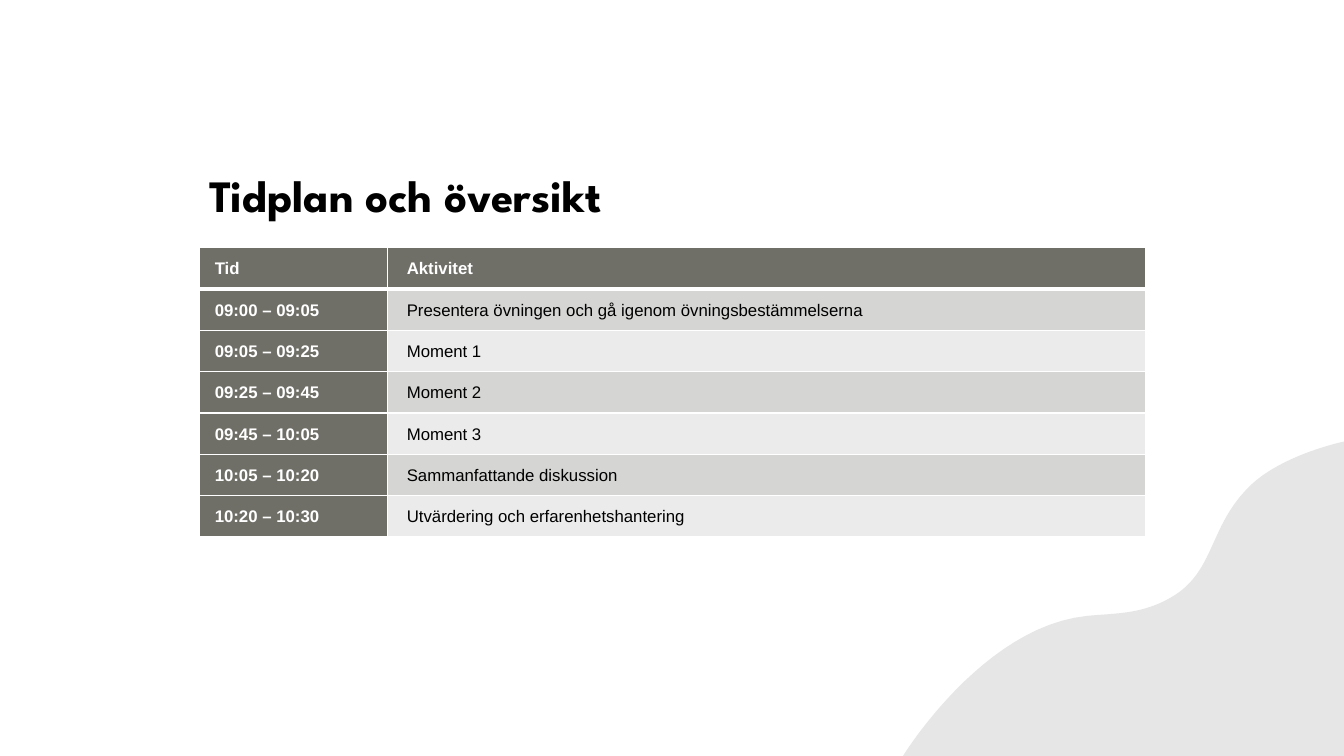
from dataclasses import dataclass

import lxml.etree
import pptx
import pptx.dml.color
import pptx.enum.text
import pptx.oxml.ns
import pptx.slide
import pptx.table
import pptx.util

Pt = pptx.util.Pt
RGBColor = pptx.dml.color.RGBColor
Anchor = pptx.enum.text.MSO_ANCHOR
qn = pptx.oxml.ns.qn

WHITE = RGBColor(0xFF, 0xFF, 0xFF)
BLACK = RGBColor(0x00, 0x00, 0x00)
OLIVE = RGBColor(0x6F, 0x6E, 0x67)
DARK_BAND = RGBColor(0xD5, 0xD5, 0xD3)
LIGHT_BAND = RGBColor(0xEB, 0xEB, 0xEB)
WAVE_GREY = RGBColor(0xE7, 0xE6, 0xE6)

LEFT, WIDTH = 142.6, 675.6
TABLE_TOP, ROW_HEIGHT = 177, 29.52
CURVE_STEPS = 24

Point = tuple[float, float]


@dataclass(frozen=True)
class Activity:
    time: str
    name: str


@dataclass(frozen=True)
class Column:
    width: float
    inset: float
    indent: float


@dataclass(frozen=True)
class Curve:
    first_control: Point
    second_control: Point
    end: Point


HEADER = Activity("Tid", "Aktivitet")
SCHEDULE = [
    Activity("09:00 – 09:05", "Presentera övningen och gå igenom övningsbestämmelserna"),
    Activity("09:05 – 09:25", "Moment 1"),
    Activity("09:25 – 09:45", "Moment 2"),
    Activity("09:45 – 10:05", "Moment 3"),
    Activity("10:05 – 10:20", "Sammanfattande diskussion"),
    Activity("10:20 – 10:30", "Utvärdering och erfarenhetshantering"),
]
COLUMNS = [Column(134.3, 7.2, 4.32), Column(WIDTH - 134.3, 0, 14.4)]

WAVE_START = (645, 540)
WAVE = [
    Curve((645, 540), (702, 447.1), (776.9, 439.9)),
    Curve((797.8, 437.8), (818.6, 439.2), (841.7, 423.4)),
    Curve((867.6, 404.6), (864.7, 375.1), (892.1, 347.8)),
    Curve((915.1, 324.7), (960, 315.4), (960, 315.4)),
]


def curve_points(start: Point, curve: Curve) -> list[Point]:
    corners = (start, curve.first_control, curve.second_control, curve.end)
    points = []
    for step in range(1, CURVE_STEPS + 1):
        t = step / CURVE_STEPS
        weights = ((1 - t) ** 3, 3 * t * (1 - t) ** 2, 3 * t**2 * (1 - t), t**3)
        x, y = (sum(w * c[axis] for w, c in zip(weights, corners)) for axis in (0, 1))
        points.append((Pt(x), Pt(y)))
    return points


def draw_wave(slide: pptx.slide.Slide) -> None:
    outline = slide.shapes.build_freeform(Pt(WAVE_START[0]), Pt(WAVE_START[1]), scale=1.0)
    start = WAVE_START
    for curve in WAVE:
        outline.add_line_segments(curve_points(start, curve), close=False)
        start = curve.end
    outline.add_line_segments([(Pt(960), Pt(540))], close=True)
    wave = outline.convert_to_shape()
    wave.shadow.inherit = False
    wave.fill.solid()
    wave.fill.fore_color.rgb = WAVE_GREY
    wave.line.fill.background()


def write_title(slide: pptx.slide.Slide) -> None:
    title = slide.shapes.title
    title.left, title.top, title.width, title.height = Pt(LEFT), Pt(85.7), Pt(WIDTH), Pt(76.3)
    frame = title.text_frame
    frame.text = "Tidplan och översikt"
    frame.auto_size = pptx.enum.text.MSO_AUTO_SIZE.NONE
    frame.vertical_anchor = Anchor.BOTTOM
    heading = frame.paragraphs[0]
    heading.alignment = pptx.enum.text.PP_ALIGN.LEFT
    heading.line_spacing = 0.9
    heading.font.name = "League Spartan"
    heading.font.size = Pt(32)
    heading.font.bold = True
    heading.font.color.rgb = BLACK


def set_borders(cell: pptx.table._Cell, top: float, bottom: float) -> None:
    properties = cell._tc.get_or_add_tcPr()
    for side, width in (("L", 1), ("R", 1), ("T", top), ("B", bottom)):
        border = lxml.etree.SubElement(properties, qn(f"a:ln{side}"), w=str(Pt(width)))
        fill = lxml.etree.SubElement(border, qn("a:solidFill"))
        lxml.etree.SubElement(fill, qn("a:srgbClr"), val=str(WHITE))


def fill_cell(cell: pptx.table._Cell, text: str, column: Column, row: int, emphasis: bool) -> None:
    set_borders(cell, top=3 if row == 1 else 1, bottom=3 if row == 0 else 1)
    cell.fill.solid()
    cell.fill.fore_color.rgb = OLIVE if emphasis else DARK_BAND if row % 2 else LIGHT_BAND
    cell.vertical_anchor = Anchor.MIDDLE
    cell.margin_left = Pt(column.inset)
    cell.margin_right = cell.margin_top = cell.margin_bottom = Pt(7.2)
    cell.text = text
    entry = cell.text_frame.paragraphs[0]
    entry.line_spacing = 1.07
    entry.font.name = "Arial"
    entry.font.size = Pt(12)
    entry.font.bold = emphasis
    entry.font.color.rgb = WHITE if emphasis else BLACK
    indents = entry._p.get_or_add_pPr()
    indents.set("marL", str(Pt(column.indent)))
    indents.set("indent", str(Pt(-0.72)))


def draw_schedule(slide: pptx.slide.Slide) -> None:
    rows = [HEADER, *SCHEDULE]
    schedule = slide.shapes.add_table(
        len(rows), len(COLUMNS), Pt(LEFT), Pt(TABLE_TOP), Pt(WIDTH), Pt(ROW_HEIGHT * len(rows))
    ).table
    schedule.first_col = True
    for index, column in enumerate(COLUMNS):
        schedule.columns[index].width = Pt(column.width)
    for row, activity in enumerate(rows):
        schedule.rows[row].height = Pt(ROW_HEIGHT)
        for index, text in enumerate((activity.time, activity.name)):
            emphasis = row == 0 or index == 0
            fill_cell(schedule.cell(row, index), text, COLUMNS[index], row, emphasis)


def main() -> None:
    presentation = pptx.Presentation()
    presentation.slide_width, presentation.slide_height = Pt(960), Pt(540)
    slide = presentation.slides.add_slide(presentation.slide_layouts[5])
    draw_wave(slide)
    write_title(slide)
    draw_schedule(slide)
    presentation.save("out.pptx")


if __name__ == "__main__":
    main()
